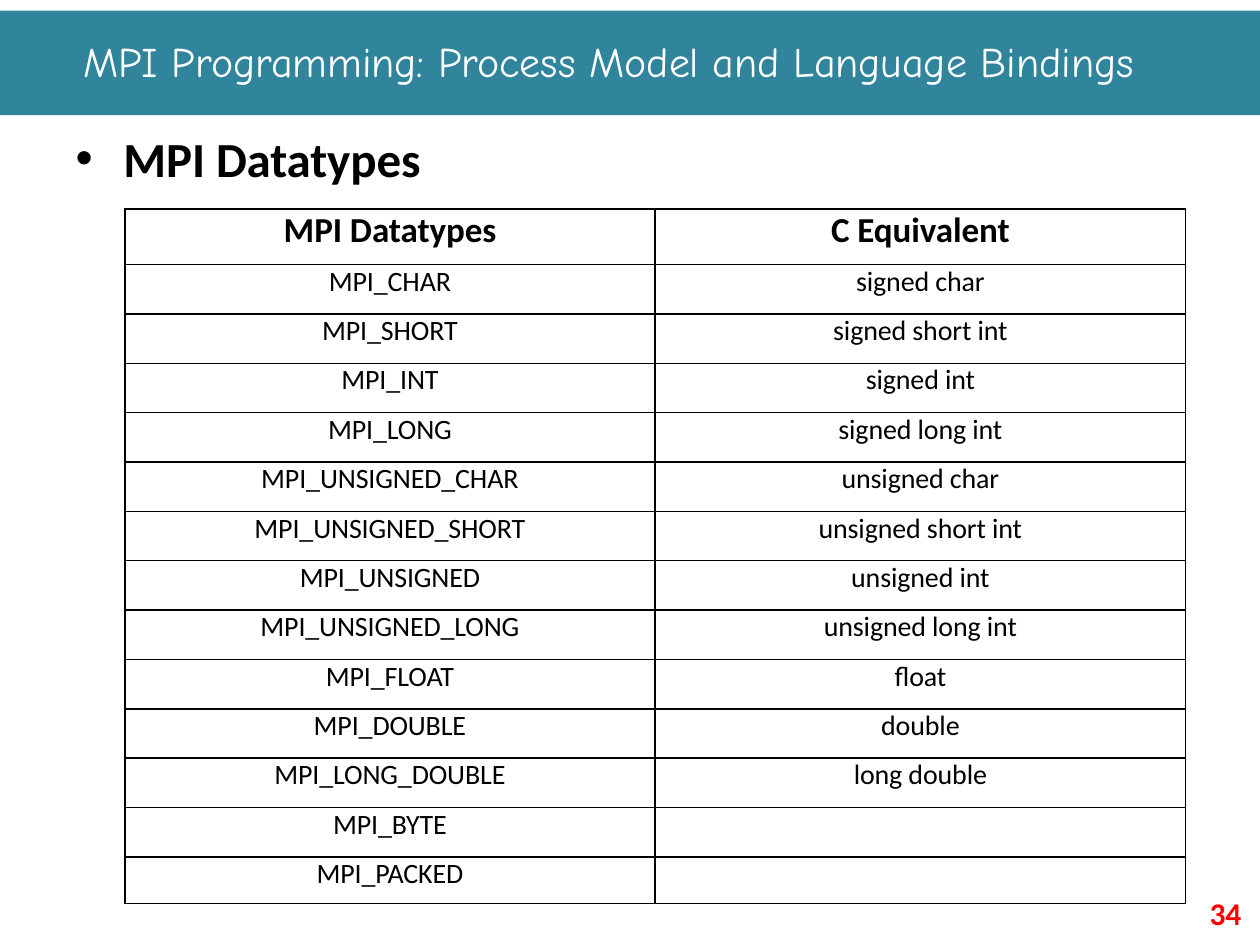
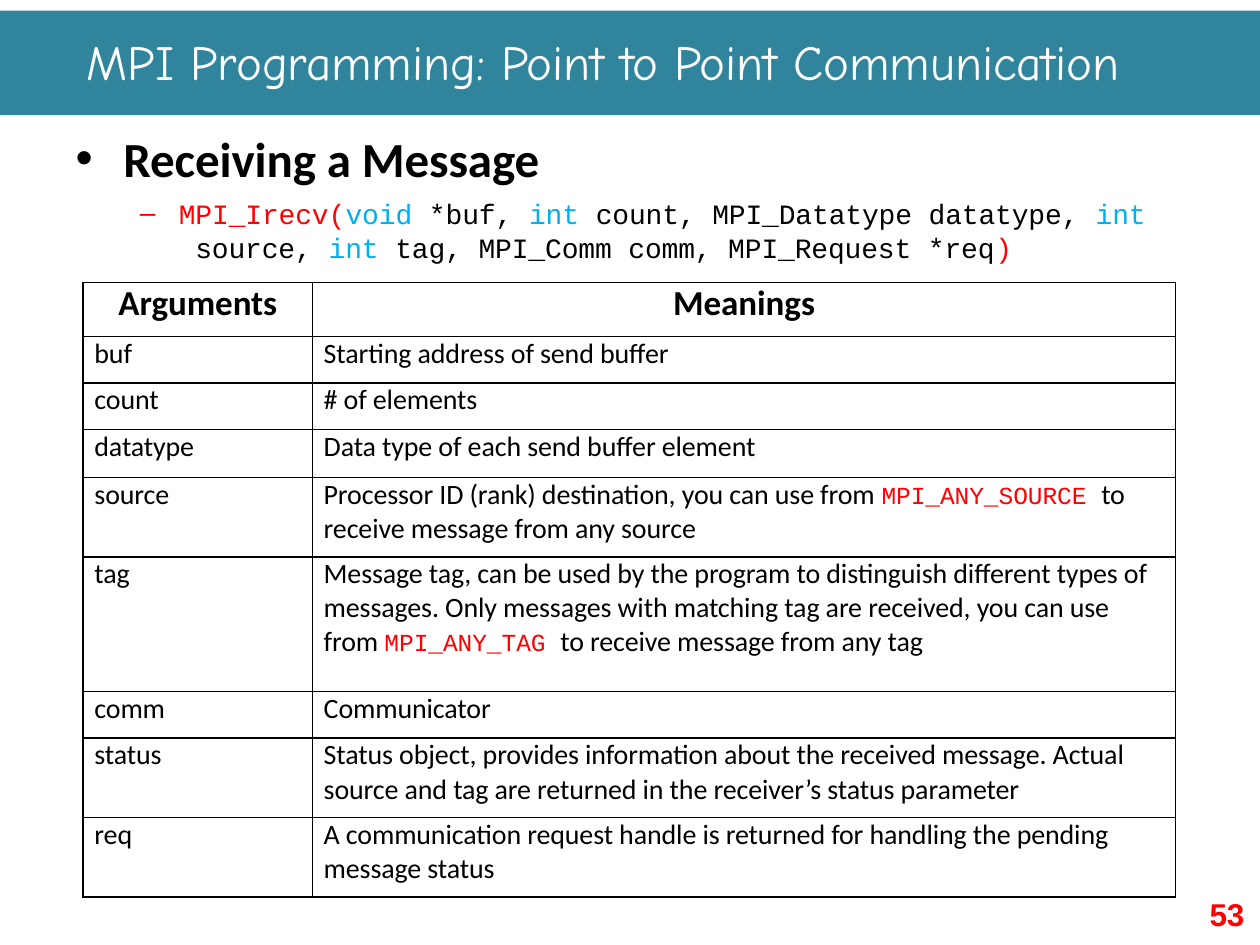
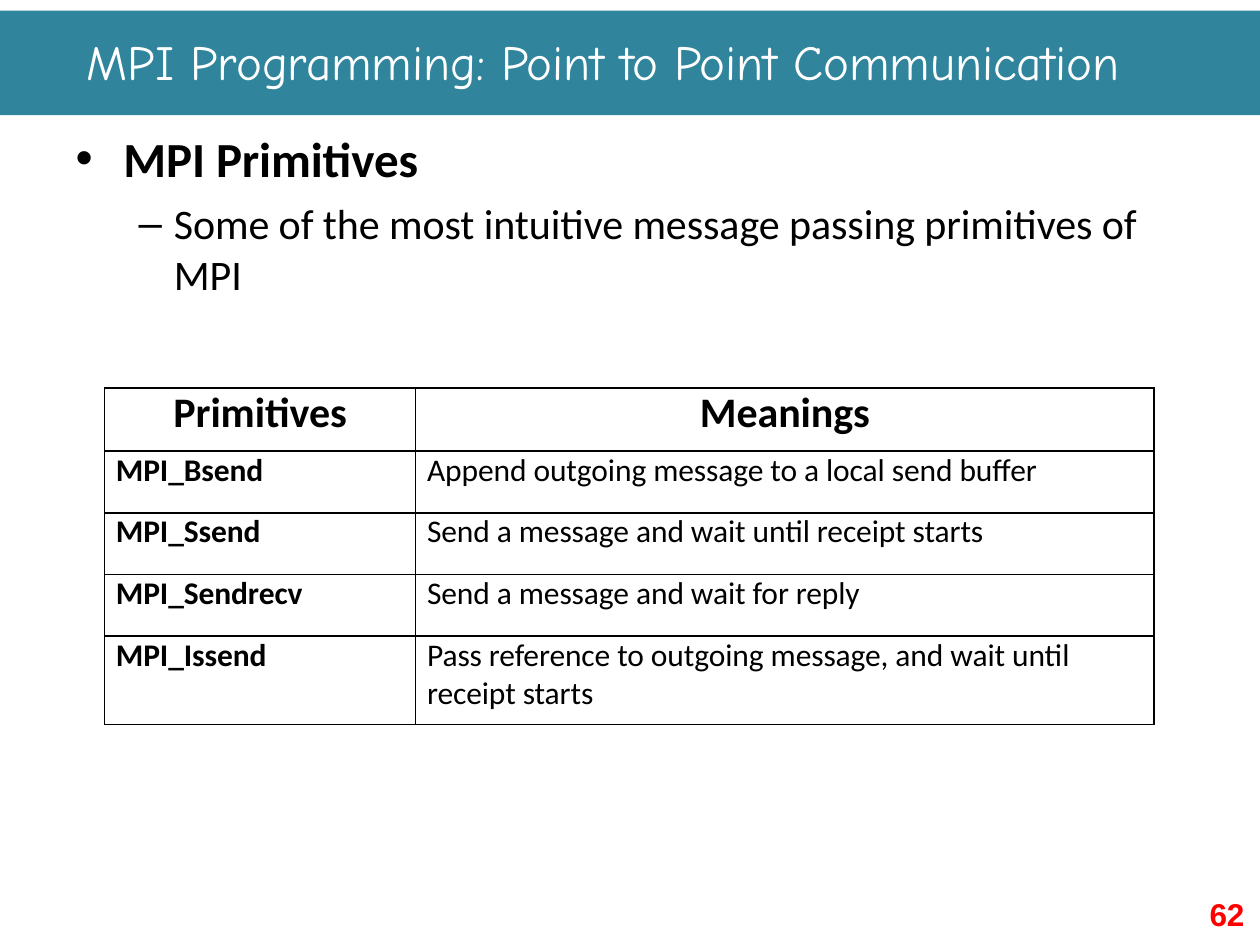
from lxml import etree
from pptx import Presentation
from pptx.dml.color import RGBColor
from pptx.enum.shapes import MSO_SHAPE
from pptx.enum.text import MSO_ANCHOR, PP_ALIGN
from pptx.oxml.ns import qn
from pptx.util import Inches, Pt

RECTANGLE = MSO_SHAPE.RECTANGLE
LEFT, CENTER = PP_ALIGN.LEFT, PP_ALIGN.CENTER
TOP, MIDDLE = MSO_ANCHOR.TOP, MSO_ANCHOR.MIDDLE

COLUMNS, ROWS = 100, 75
UNIT = 0.1  # inches in one grid column or row

TEAL, WHITE, BLACK, RED, BLUE = "30859C", "FFFFFF", "000000", "FF0000", "00AFEF"
BODY, HEADING, CODE, PLAIN = "Calibri", "Comic Neue", "Courier New", "Arial"
PAGE_NUMBER_LEADING = {BODY: 18.1, PLAIN: 19.2}

CONSTANT = {"font": CODE, "size": 14, "color": RED}
KEYWORD = {"color": BLUE}
CALL = {"color": RED}

DATATYPES = [
    ("MPI_CHAR", "signed char"),
    ("MPI_SHORT", "signed short int"),
    ("MPI_INT", "signed int"),
    ("MPI_LONG", "signed long int"),
    ("MPI_UNSIGNED_CHAR", "unsigned char"),
    ("MPI_UNSIGNED_SHORT", "unsigned short int"),
    ("MPI_UNSIGNED", "unsigned int"),
    ("MPI_UNSIGNED_LONG", "unsigned long int"),
    ("MPI_FLOAT", "float"),
    ("MPI_DOUBLE", "double"),
    ("MPI_LONG_DOUBLE", "long double"),
    ("MPI_BYTE", ""),
    ("MPI_PACKED", ""),
]

IRECV_START = [
    ("MPI_Irecv(", CALL), ("void ", KEYWORD), "*buf, ", ("int ", KEYWORD),
    "count, MPI_Datatype datatype, ", ("int", KEYWORD),
]
IRECV_END = [
    "source, ", ("int ", KEYWORD),
    "tag, MPI_Comm comm, MPI_Request *req", (")", CALL),
]

RECEIVE_ARGUMENTS = [
    ("buf", "Starting address of send buffer"),
    ("count", "# of elements"),
    ("datatype", "Data type of each send buffer element"),
    ("source", ["Processor ID (rank) destination, you can use from ",
                ("MPI_ANY_SOURCE ", CONSTANT),
                "to receive message from any source"]),
    ("tag", ["Message tag, can be used by the program to distinguish different "
             "types of messages. Only messages with matching tag are received, "
             "you can use from ",
             ("MPI_ANY_TAG ", CONSTANT),
             "to receive message from any tag"]),
    ("comm", "Communicator"),
    ("status", "Status object, provides information about the received message. "
               "Actual source and tag are returned in the receiver’s status parameter"),
    ("req", "A communication request handle is returned for handling the pending "
            "message status"),
]

PRIMITIVES = [
    ("MPI_Bsend", "Append outgoing message to a local send buffer"),
    ("MPI_Ssend", "Send a message and wait until receipt starts"),
    ("MPI_Sendrecv", "Send a message and wait for reply"),
    ("MPI_Issend", "Pass reference to outgoing message, and wait until receipt starts"),
]


def rgb(hex_color):
    return RGBColor.from_string(hex_color)


def grid(units):
    return Inches(units * UNIT)


def set_font(font, name=None, size=None, color=None, bold=None):
    if name:
        font.name = name
    if size:
        font.size = Pt(size)
    if color:
        font.color.rgb = rgb(color)
    if bold is not None:
        font.bold = bold


def set_indent(paragraph, left, bullet=None, hang=0, bullet_color=BLACK):
    """Indent a paragraph, with its bullet hanging to the left of the text."""
    properties = paragraph._p.get_or_add_pPr()
    properties.set("marL", str(grid(left)))
    properties.set("indent", str(-grid(hang)))
    if bullet:
        color = etree.Element(qn("a:buClr"))
        etree.SubElement(color, qn("a:srgbClr"), val=bullet_color)
        marks = [color, etree.Element(qn("a:buFont"), typeface=PLAIN),
                 etree.Element(qn("a:buChar"), char=bullet)]
        # bullet marks belong after the spacing and before the default font
        default_font = properties.find(qn("a:defRPr"))
        for mark in marks:
            default_font.addprevious(mark)


def set_borders(cell, color=BLACK, width=1):
    properties = cell._tc.get_or_add_tcPr()
    for side in ("lnL", "lnR", "lnT", "lnB"):
        line = etree.SubElement(properties, qn("a:" + side), w=str(Pt(width)))
        fill = etree.SubElement(line, qn("a:solidFill"))
        etree.SubElement(fill, qn("a:srgbClr"), val=color)


class Deck:
    """The lecture style together with the slide being built."""

    def __init__(self):
        self.presentation = Presentation()
        self.presentation.slide_width = grid(COLUMNS)
        self.presentation.slide_height = grid(ROWS)
        self.slide = None

    def new_slide(self, title, number, title_size=28, title_left=6.9, number_font=PLAIN):
        self.slide = self.presentation.slides.add_slide(self.presentation.slide_layouts[6])
        band = self.slide.shapes.add_shape(RECTANGLE, 0, grid(0.85), grid(COLUMNS), grid(8.3))
        band.shadow.inherit = False
        band.fill.solid()
        band.fill.fore_color.rgb = rgb(TEAL)
        band.line.fill.background()
        heading = self.frame(title_left, 2.5, 87, 4.7, MIDDLE)
        self.add_text(heading.paragraphs[0], title, HEADING, title_size, WHITE)
        footer = self.frame(96, 71.4, 3.4, 3.1).paragraphs[0]
        self.add_text(footer, number, number_font, 18, RED, True)
        footer.line_spacing = Pt(PAGE_NUMBER_LEADING[number_font])

    def frame(self, left, top, width, height, anchor=TOP):
        """Add a text box without margins and return its text frame."""
        box = self.slide.shapes.add_textbox(grid(left), grid(top), grid(width), grid(height))
        frame = box.text_frame
        frame.word_wrap = True
        frame.vertical_anchor = anchor
        frame.margin_left = frame.margin_right = frame.margin_top = frame.margin_bottom = 0
        return frame

    def add_text(self, paragraph, content, font=BODY, size=16, color=BLACK, bold=False):
        """Fill a paragraph with a string, or with strings and (string, style) pairs."""
        set_font(paragraph.font, font, size, color, bold)
        for part in [content] if isinstance(content, str) else content:
            words, style = (part, {}) if isinstance(part, str) else part
            run = paragraph.add_run()
            run.text = words
            run._r.get_or_add_rPr().set("spc", "-5")
            set_font(run.font, style.get("font"), style.get("size"), style.get("color"))

    def topic(self, words):
        """Add the main bullet and return its text frame."""
        frame = self.frame(5.9, 10.2, 87, 4.7)
        self.add_text(frame.paragraphs[0], words, size=28, bold=True)
        set_indent(frame.paragraphs[0], 3.9, "•", 3.8)
        return frame

    def subtopic(self, frame, words):
        paragraph = frame.add_paragraph()
        paragraph.space_before = Pt(6)
        self.add_text(paragraph, words, size=24)
        set_indent(paragraph, 7.9, "–", 2.8)

    def signature(self, first_line, second_line):
        frame = self.frame(10.9, 15.6, 84, 5.5)
        opening, closing = frame.paragraphs[0], frame.add_paragraph()
        self.add_text(opening, first_line, CODE)
        set_indent(opening, 3.3, "–", 3.1, RED)
        self.add_text(closing, second_line, CODE)
        set_indent(closing, 4.6)

    def table(self, left, top, widths, heights, header, records,
              header_size=20, size=16, align=LEFT, bold_names=False):
        rows = [header, *records]
        table = self.slide.shapes.add_table(
            len(rows), len(widths), grid(left), grid(top),
            grid(sum(widths)), grid(sum(heights))).table
        table.first_row = table.horz_banding = False
        for column, width in zip(table.columns, widths):
            column.width = grid(width)
        for r, (record, height) in enumerate(zip(rows, heights)):
            table.rows[r].height = grid(height)
            for c, content in enumerate(record):
                is_header = r == 0
                self.cell(table.cell(r, c), content,
                          header_size if is_header else size,
                          CENTER if is_header else align,
                          is_header or (bold_names and c == 0))

    def cell(self, cell, content, size, align, bold):
        set_borders(cell)
        cell.fill.background()
        cell.margin_top = cell.margin_bottom = 0
        cell.margin_left = grid(0.9 if align == LEFT else 0)
        cell.margin_right = grid(1.5 if align == LEFT else 0)
        paragraph = cell.text_frame.paragraphs[0]
        paragraph.alignment = align
        paragraph.space_before = Pt(2)
        if content:
            self.add_text(paragraph, content, size=size, bold=bold)


def main():
    deck = Deck()

    deck.new_slide("MPI Programming: Process Model and Language Bindings", "34",
                   title_size=24, title_left=6.6, number_font=BODY)
    deck.topic("MPI Datatypes")
    deck.table(9.9, 16.6, [42.1, 42.1], [4.4] + [3.92] * 12 + [3.7],
               ("MPI Datatypes", "C Equivalent"), DATATYPES, align=CENTER)

    point_to_point = "MPI Programming: Point to Point Communication"
    deck.new_slide(point_to_point, "53")
    deck.topic("Receiving a Message")
    deck.signature(IRECV_START, IRECV_END)
    deck.table(6.6, 22.4, [18.2, 68.5], [4.3, 3.7, 3.7, 3.8, 6.3, 10.7, 3.7, 6.3, 6.3],
               ("Arguments", "Meanings"), RECEIVE_ARGUMENTS)

    deck.new_slide(point_to_point, "62")
    primitives = deck.topic("MPI Primitives")
    deck.subtopic(primitives, "Some of the most intuitive message passing primitives of MPI")
    deck.table(8.3, 30.8, [24.7, 58.6], [5, 4.9, 4.9, 4.9, 7],
               ("Primitives", "Meanings"), PRIMITIVES,
               header_size=24, size=18, bold_names=True)

    deck.presentation.save("out.pptx")


if __name__ == "__main__":
    main()
